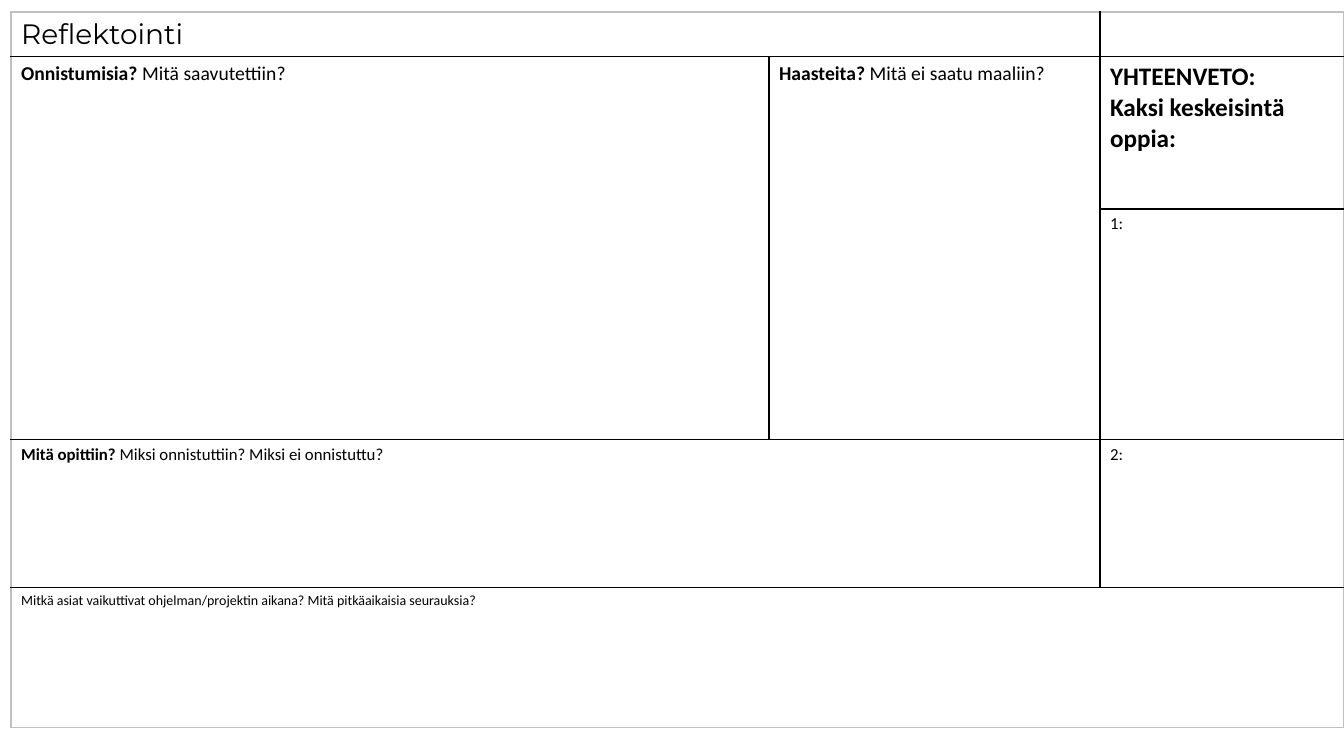
from dataclasses import dataclass

from lxml import etree
from pptx import Presentation
from pptx.dml.color import RGBColor
from pptx.oxml.ns import qn
from pptx.util import Pt


@dataclass(frozen=True)
class Theme:
    ink: str = "000000"
    paper: str = "FFFFFF"
    frame: str = "C0C0C0"
    heading_font: str = "Montserrat"
    body_font: str = "Calibri"
    title: int = 20
    summary: int = 18
    question: int = 14
    body: int = 12
    small: int = 10


THEME = Theme()


def add_text(p, text, size=THEME.body, bold=False, font=THEME.body_font):
    r = p.add_run()
    r.text = text
    r.font.size = Pt(size)
    r.font.bold = bold
    r.font.name = font
    r.font.color.rgb = RGBColor.from_string(THEME.ink)


def add_border(cell, side, color):
    """Draw one side of a cell; side is L, R, T or B."""
    ln = etree.SubElement(cell._tc.get_or_add_tcPr(), qn(f"a:ln{side}"), w=str(Pt(1)))
    fill = etree.SubElement(ln, qn("a:solidFill"))
    etree.SubElement(fill, qn("a:srgbClr"), val=color)


prs = Presentation()
prs.slide_width, prs.slide_height = Pt(960), Pt(540)
s = prs.slides.add_slide(prs.slide_layouts[6])

col_widths = [541.4, 236.4, 174.2]
row_heights = [31.8, 108.9, 164.5, 106, 99.8]
n_rows, n_cols = len(row_heights), len(col_widths)
table = s.shapes.add_table(n_rows, n_cols, Pt(7.9), Pt(8.6),
                           Pt(sum(col_widths)), Pt(sum(row_heights))).table
table.first_row = table.horz_banding = False
for column, width in zip(table.columns, col_widths):
    column.width = Pt(width)
for row, height in zip(table.rows, row_heights):
    row.height = Pt(height)

# First and last cell of each merged area
merges = [((0, 0), (0, 1)), ((1, 0), (2, 0)), ((1, 1), (2, 1)),
          ((3, 0), (3, 1)), ((4, 0), (4, 2))]
for first, last in merges:
    table.cell(*first).merge(table.cell(*last))

# Each cell holds paragraphs; each paragraph holds (text, format) runs
question = dict(size=THEME.question)
summary = dict(size=THEME.summary, bold=True)
contents = {
    (0, 0): [[("Reflektointi", dict(size=THEME.title, font=THEME.heading_font))]],
    (1, 0): [[("Onnistumisia? ", dict(question, bold=True)),
              ("Mitä saavutettiin?", question)]],
    (1, 1): [[("Haasteita?", dict(question, bold=True)),
              (" Mitä ei saatu maaliin?", question)]],
    (1, 2): [[("YHTEENVETO:", summary)], [("Kaksi keskeisintä oppia:", summary)]],
    (2, 2): [[("1:", {})]],
    (3, 0): [[("Mitä opittiin? ", dict(bold=True)),
              ("Miksi onnistuttiin? Miksi ei onnistuttu?", {})]],
    (3, 2): [[("2:", {})]],
    (4, 0): [[("Mitkä asiat vaikuttivat ohjelman/projektin aikana? "
               "Mitä pitkäaikaisia seurauksia?", dict(size=THEME.small))]],
}
for (row, col), paragraphs in contents.items():
    tf = table.cell(row, col).text_frame
    for i, runs in enumerate(paragraphs):
        p = tf.add_paragraph() if i else tf.paragraphs[0]
        for text, style in runs:
            add_text(p, text, **style)

# Black rules inside the table, a grey frame around it
for row in range(n_rows):
    for col in range(n_cols):
        cell = table.cell(row, col)
        if cell.is_spanned:
            continue
        on_frame = {
            "L": col == 0,
            "R": col + cell.span_width == n_cols,
            "T": row == 0,
            "B": row + cell.span_height == n_rows,
        }
        for side, outer in on_frame.items():
            add_border(cell, side, THEME.frame if outer else THEME.ink)
        cell.fill.solid()
        cell.fill.fore_color.rgb = RGBColor.from_string(THEME.paper)

prs.save("out.pptx")
